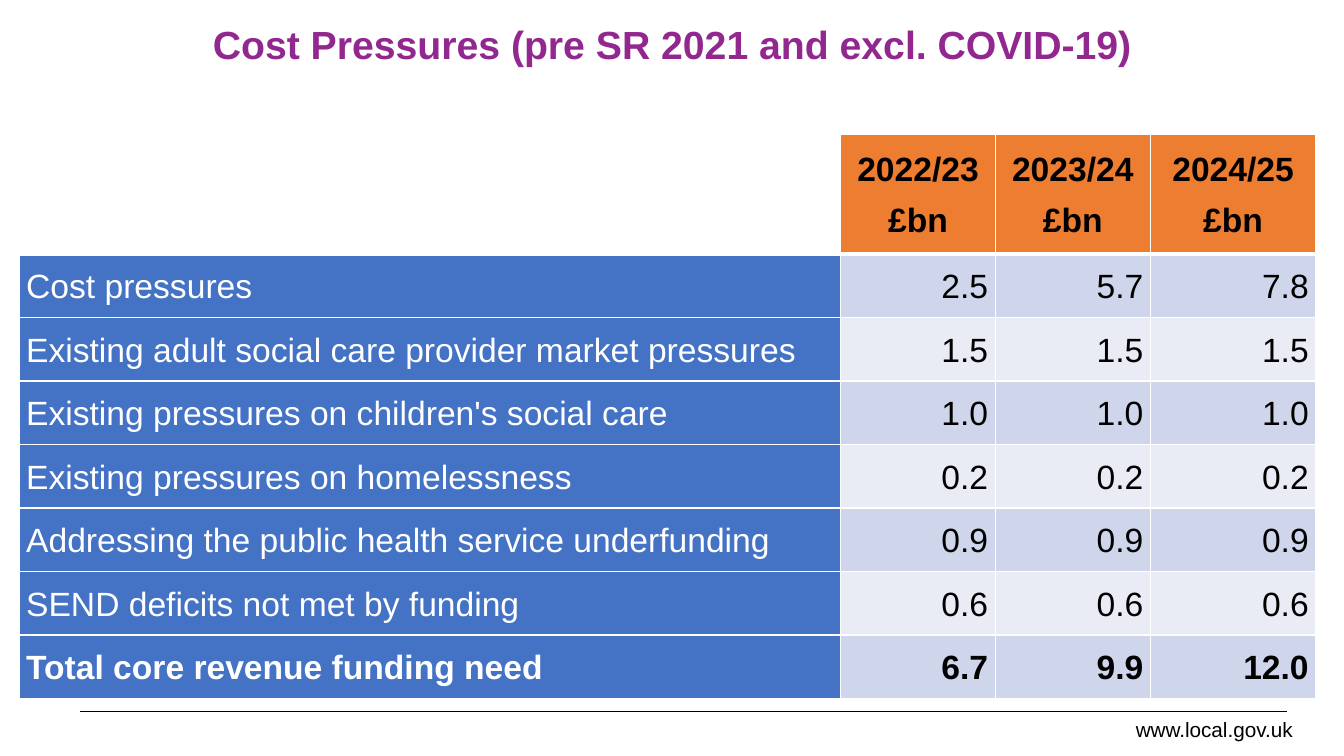
from lxml.etree import SubElement
from pptx import Presentation
from pptx.dml.color import RGBColor
from pptx.enum.shapes import MSO_CONNECTOR
from pptx.enum.text import MSO_ANCHOR, MSO_AUTO_SIZE, PP_ALIGN
from pptx.oxml.ns import qn
from pptx.util import Inches, Pt

TITLE = "Cost Pressures (pre SR 2021 and excl. COVID-19)"
WEBSITE = "www.local.gov.uk"
YEARS = ["2022/23", "2023/24", "2024/25"]
UNIT = "£bn"
PRESSURES = [
    ("Cost pressures", "2.5", "5.7", "7.8"),
    ("Existing adult social care provider market pressures", "1.5", "1.5", "1.5"),
    ("Existing pressures on children's social care", "1.0", "1.0", "1.0"),
    ("Existing pressures on homelessness", "0.2", "0.2", "0.2"),
    ("Addressing the public health service underfunding", "0.9", "0.9", "0.9"),
    ("SEND deficits not met by funding", "0.6", "0.6", "0.6"),
    ("Total core revenue funding need", "6.7", "9.9", "12.0"),
]
COLUMN_WIDTHS = [8.15, 1.53, 1.54, 1.64]
HEADER_HEIGHT, ROW_HEIGHT = 1.19, 0.63
BLACK, WHITE, PURPLE = "000000", "FFFFFF", "91278F"
ORANGE, BLUE, BANDS = "ED7D31", "4472C4", ("CFD5EA", "E9EBF5")


def color(value):
    return RGBColor.from_string(value)


def add_text(paragraph, text, size, text_color, bold=False, align=PP_ALIGN.LEFT):
    paragraph.alignment = align
    run = paragraph.add_run()
    run.text = text
    font = run.font
    font.name, font.size, font.bold = "Arial", Pt(size), bold
    font.color.rgb = color(text_color)


def set_borders(cell, top, bottom):
    properties = cell._tc.get_or_add_tcPr()
    for side, points in (("L", 1), ("R", 1), ("T", top), ("B", bottom)):
        border = SubElement(properties, qn(f"a:ln{side}"), w=str(Pt(points)))
        fill = SubElement(border, qn("a:solidFill"))
        SubElement(fill, qn("a:srgbClr"), val=WHITE)


def fill_cell(cell, lines, fill, text_color, bold, align):
    cell.fill.solid()
    cell.fill.fore_color.rgb = color(fill)
    cell.vertical_anchor = MSO_ANCHOR.MIDDLE
    cell.margin_left = cell.margin_right = Inches(0.07)
    cell.margin_top = cell.margin_bottom = 0
    frame = cell.text_frame
    for index, line in enumerate(lines):
        paragraph = frame.add_paragraph() if index else frame.paragraphs[0]
        paragraph.line_spacing = 1.07
        paragraph.space_after = Pt(8)
        add_text(paragraph, line, 24, text_color, bold, align)


def add_title(slide, width):
    title = slide.shapes.title
    title.left, title.top, title.width, title.height = 0, 0, width, Inches(0.87)
    frame = title.text_frame
    frame.auto_size = MSO_AUTO_SIZE.NONE
    frame.vertical_anchor = MSO_ANCHOR.MIDDLE
    add_text(frame.paragraphs[0], TITLE, 28, PURPLE, True, PP_ALIGN.CENTER)


def add_footer(slide):
    rule_y = Inches(7.06)
    rule = slide.shapes.add_connector(
        MSO_CONNECTOR.STRAIGHT, Inches(0.79), rule_y, Inches(12.76), rule_y)
    rule.line.color.rgb = color(BLACK)
    rule.line.width = Pt(0.75)
    SubElement(rule._element.spPr, qn("a:effectLst"))
    website = slide.shapes.add_textbox(Inches(11.14), rule_y, Inches(1.78), Inches(0.35))
    website.text_frame.word_wrap = False
    add_text(website.text_frame.paragraphs[0], WEBSITE, 14.8, BLACK, align=PP_ALIGN.RIGHT)


def add_pressures_table(slide):
    row_count = len(PRESSURES) + 1
    height = HEADER_HEIGHT + ROW_HEIGHT * len(PRESSURES)
    table = slide.shapes.add_table(
        row_count, len(COLUMN_WIDTHS), Inches(0.19), Inches(1.33),
        Inches(sum(COLUMN_WIDTHS)), Inches(height)).table
    table.first_row = table.horz_banding = False
    for column, width in zip(table.columns, COLUMN_WIDTHS):
        column.width = Inches(width)
    for index, row in enumerate(table.rows):
        row.height = Inches(ROW_HEIGHT if index else HEADER_HEIGHT)
        for cell in row.cells:
            set_borders(cell, 3 if index == 1 else 1, 1 if index else 3)

    table.cell(0, 0).fill.background()
    for column, year in enumerate(YEARS, 1):
        fill_cell(table.cell(0, column), [year, UNIT], ORANGE, BLACK, True, PP_ALIGN.CENTER)
    for row, (label, *values) in enumerate(PRESSURES, 1):
        is_total = row == len(PRESSURES)
        fill_cell(table.cell(row, 0), [label], BLUE, WHITE, is_total, PP_ALIGN.LEFT)
        band = BANDS[(row - 1) % 2]
        for column, value in enumerate(values, 1):
            fill_cell(table.cell(row, column), [value], band, BLACK, is_total, PP_ALIGN.RIGHT)


def main():
    presentation = Presentation()
    presentation.slide_width, presentation.slide_height = Inches(13.33), Inches(7.5)
    slide = presentation.slides.add_slide(presentation.slide_layouts[5])
    add_footer(slide)
    add_pressures_table(slide)
    add_title(slide, presentation.slide_width)
    presentation.save("out.pptx")


if __name__ == "__main__":
    main()
